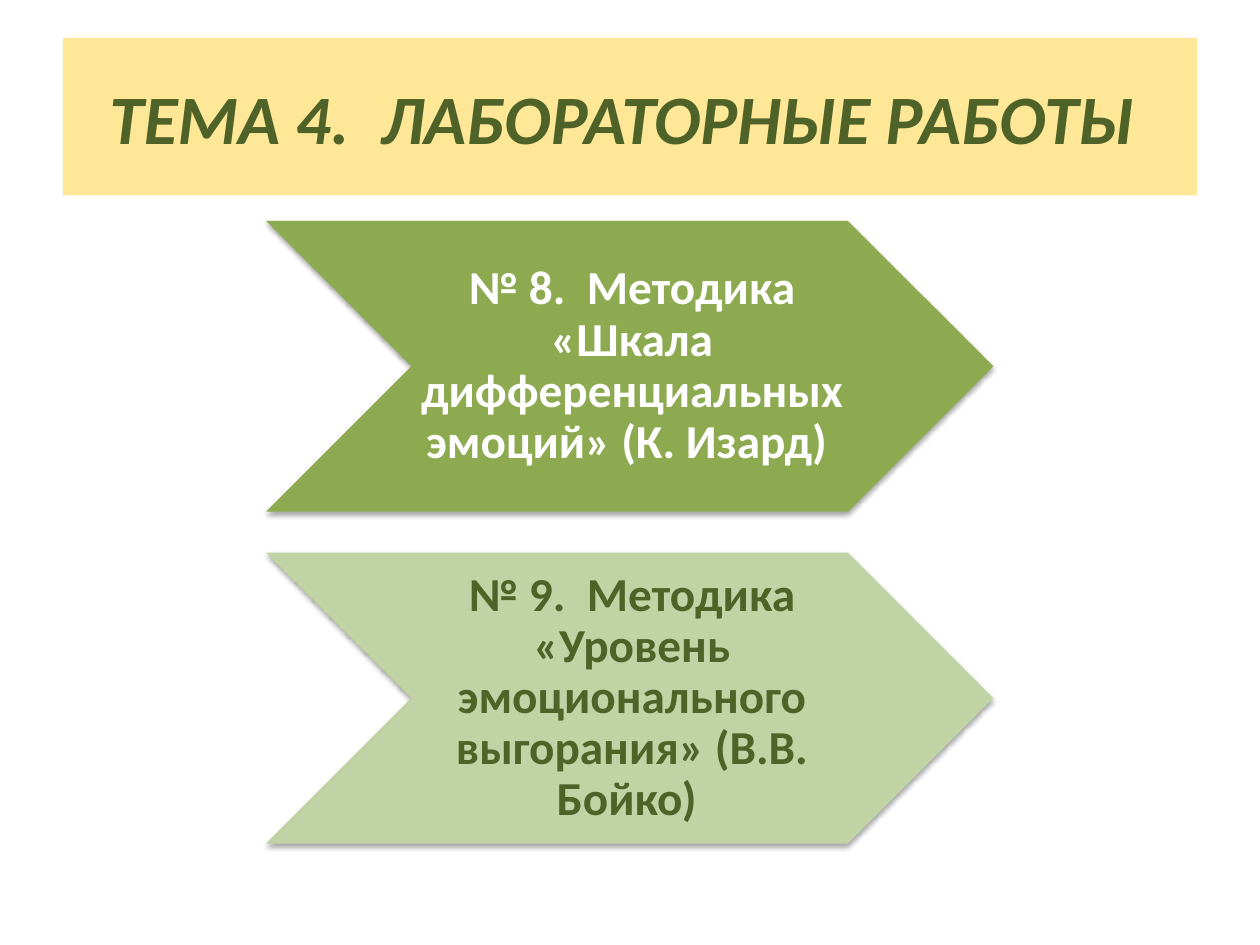
"""Build the slide listing the laboratory works of topic 4 as two chevrons."""
import lxml.etree
import pptx
import pptx.dml.color
import pptx.enum.shapes
import pptx.enum.text
import pptx.oxml
import pptx.oxml.ns
import pptx.util

Pt = pptx.util.Pt
RGB = pptx.dml.color.RGBColor.from_string

THEME = {
    "font": "Calibri",
    "banner": "FEE898",
    "dark": "4F6228",
    "light": "FFFFFF",
    "green": "8DAA51",
    "pale": "C1D3A5",
    "title_size": 39.6,
    "body_size": 27,
}
SHADOW = (
    f'<a:outerShdw {pptx.oxml.ns.nsdecls("a")} blurRad="{Pt(3.1)}" dist="{Pt(1.8)}" '
    'dir="5400000" rotWithShape="0"><a:srgbClr val="000000">'
    '<a:alpha val="35000"/></a:srgbClr></a:outerShdw>'
)


def add_text(slide, box, text, size, color, italic=None):
    """Add a vertically centred text box with one bold run."""
    shape = slide.shapes.add_textbox(*[Pt(length) for length in box])
    frame = shape.text_frame
    frame.word_wrap = True
    frame.vertical_anchor = pptx.enum.text.MSO_ANCHOR.MIDDLE
    paragraph = frame.paragraphs[0]
    paragraph.alignment = pptx.enum.text.PP_ALIGN.CENTER
    run = paragraph.add_run()
    run.text = text
    run.font.name = THEME["font"]
    run.font.size = Pt(size)
    run.font.bold = True
    run.font.italic = italic
    run.font.color.rgb = RGB(color)
    return shape


presentation = pptx.Presentation()
presentation.slide_width = Pt(720)
presentation.slide_height = Pt(540)
slide = presentation.slides.add_slide(presentation.slide_layouts[6])

title = add_text(slide, (36, 21.6, 648, 90), "ТЕМА 4.  ЛАБОРАТОРНЫЕ РАБОТЫ ",
                 THEME["title_size"], THEME["dark"], italic=True)
title.fill.solid()
title.fill.fore_color.rgb = RGB(THEME["banner"])

works = [
    ("№ 8.  Методика «Шкала дифференциальных эмоций» (К. Изард) ",
     THEME["green"], THEME["light"]),
    ("№ 9.  Методика «Уровень эмоционального выгорания» (В.В. Бойко) ",
     THEME["pale"], THEME["dark"]),
]
left, first_top, width, height, pitch = 152, 126.2, 415.6, 166.2, 189.6

for index, (text, fill, color) in enumerate(works):
    top = first_top + index * pitch
    chevron = slide.shapes.add_shape(
        pptx.enum.shapes.MSO_SHAPE.CHEVRON, Pt(left), Pt(top), Pt(width), Pt(height))
    chevron.fill.solid()
    chevron.fill.fore_color.rgb = RGB(fill)
    chevron.line.fill.background()
    chevron.shadow.inherit = False
    effects = chevron.element.spPr.find(pptx.oxml.ns.qn("a:effectLst"))
    effects.append(lxml.etree.fromstring(SHADOW))

    label = add_text(slide, (left + height / 2, top, width - height, height),
                     text, THEME["body_size"], color)
    frame = label.text_frame
    frame.margin_left = Pt(2.7)
    frame.margin_right = Pt(0)
    frame.margin_top = frame.margin_bottom = Pt(1.4)
    frame.paragraphs[0].line_spacing = 0.9

presentation.save("out.pptx")
